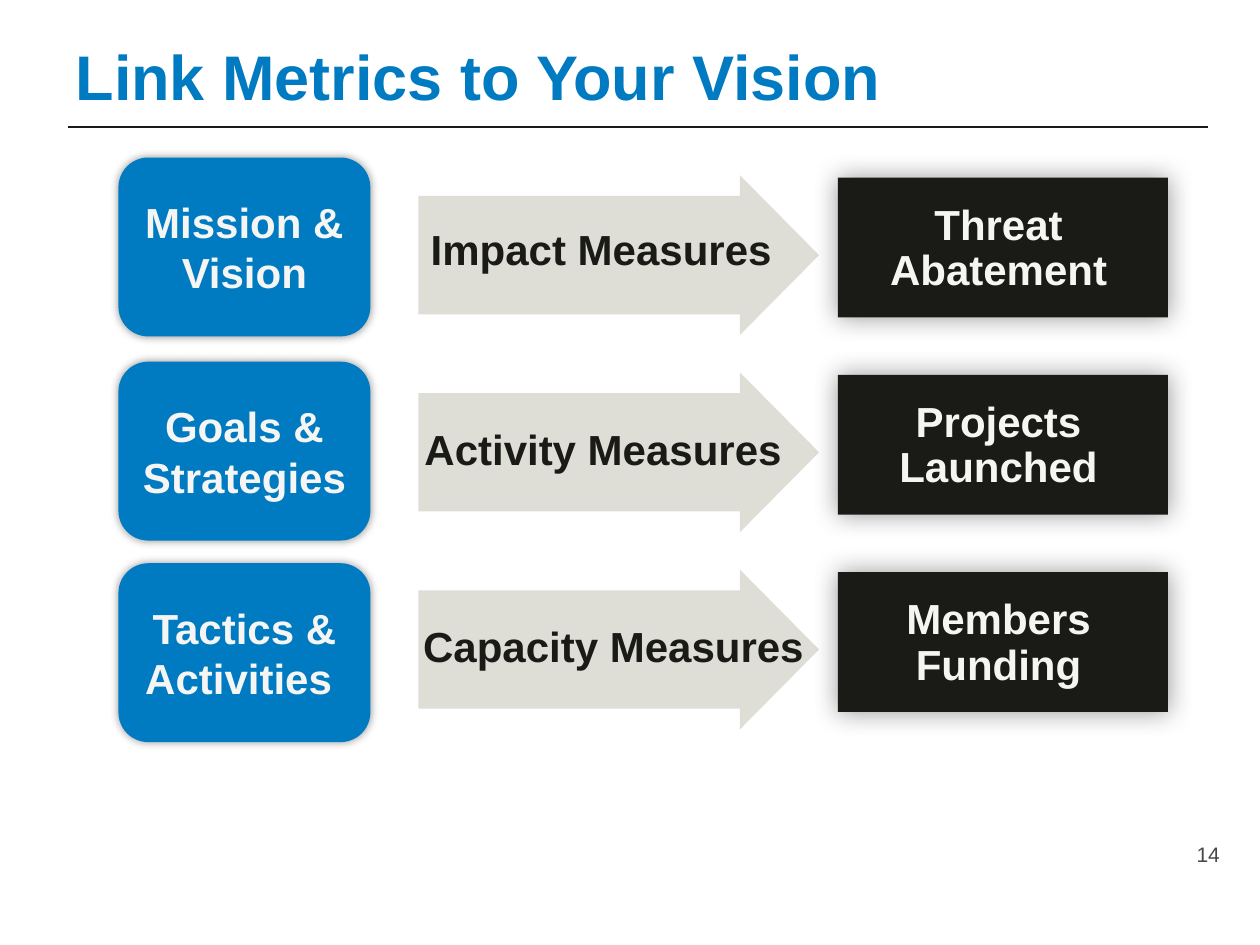
from dataclasses import dataclass

from lxml import etree
from pptx import Presentation
from pptx.dml.color import RGBColor
from pptx.enum.shapes import MSO_CONNECTOR, MSO_SHAPE
from pptx.enum.text import MSO_ANCHOR, PP_ALIGN
from pptx.oxml.ns import qn
from pptx.util import Inches, Pt

ROUNDED = MSO_SHAPE.ROUNDED_RECTANGLE
ARROW = MSO_SHAPE.RIGHT_ARROW
RECT = MSO_SHAPE.RECTANGLE
LEFT, CENTER, RIGHT = PP_ALIGN.LEFT, PP_ALIGN.CENTER, PP_ALIGN.RIGHT
TOP, MIDDLE, BOTTOM = MSO_ANCHOR.TOP, MSO_ANCHOR.MIDDLE, MSO_ANCHOR.BOTTOM

FONT = "Arial"
BLUE, INK, STONE, PALE, GREY = "007AC1", "1A1A16", "BEBEB0", "F5F5F3", "484847"
FIRST_ARROW, LAST_ARROW = 1.39, 4.52


@dataclass
class Row:
    goal: str
    goal_top: float
    measure: str
    measure_left: float
    measure_drop: float  # label top below the arrow top
    measure_width: float
    results: list[str]  # one paragraph each


ROWS = [
    Row("Mission & Vision", 1.25, "Impact Measures", 3.32, 0.38, 3.18,
        ["Threat\vAbatement"]),
    Row("Goals & Strategies", 2.87, "Activity Measures", 3.27, 0.4, 3.28,
        ["Projects", "Launched"]),
    Row("Tactics & Activities ", 4.47, "Capacity Measures", 3.26, 0.4, 3.38,
        ["Members", "Funding"]),
]


def rgb(color: str) -> RGBColor:
    return RGBColor.from_string(color)


def write(tf, lines: list[str], size: float, color: str, bold=True,
          align=LEFT, anchor=TOP, spacing=None) -> None:
    tf.word_wrap = True
    tf.vertical_anchor = anchor
    for i, line in enumerate(lines):
        p = tf.paragraphs[0] if i == 0 else tf.add_paragraph()
        p.alignment = align
        p.space_before = Pt(0)
        if spacing:
            p.line_spacing = spacing
        for j, part in enumerate(line.split("\v")):
            if j:
                p.add_line_break()
            r = p.add_run()
            r.text = part
            r.font.name, r.font.size, r.font.bold = FONT, Pt(size), bold
            r.font.color.rgb = rgb(color)


def add_shape(s, kind, x: float, y: float, w: float, h: float, color: str):
    sp = s.shapes.add_shape(kind, Inches(x), Inches(y), Inches(w), Inches(h))
    sp.shadow.inherit = False
    sp.fill.solid()
    sp.fill.fore_color.rgb = rgb(color)
    sp.line.fill.background()
    return sp


def add_text(s, x: float, y: float, w: float, h: float, lines: list[str],
             size: float, color: str, **style):
    box = s.shapes.add_textbox(Inches(x), Inches(y), Inches(w), Inches(h))
    write(box.text_frame, lines, size, color, **style)
    return box


def add_shadow(sp, blur: float, angle: int) -> None:
    effects = sp._element.spPr.find(qn("a:effectLst"))
    shadow = etree.SubElement(effects, qn("a:outerShdw"), blurRad=str(Pt(blur)),
                              dist="0", dir=str(angle * 60000), rotWithShape="0")
    color = etree.SubElement(shadow, qn("a:srgbClr"), val="000000")
    etree.SubElement(color, qn("a:alpha"), val="40000")


def add_row(s, row: Row, top: float) -> None:
    # Goal
    sp = add_shape(s, ROUNDED, 0.94, row.goal_top, 2, 1.42, BLUE)
    add_shadow(sp, 5, 0)
    write(sp.text_frame, [row.goal], 24, PALE, align=CENTER, anchor=MIDDLE)

    # Half-transparent arrow with its measure
    sp = add_shape(s, ARROW, 3.32, top, 3.18, 1.27, STONE)
    sp.adjustments[0], sp.adjustments[1] = 0.74, 0.495
    fill_color = sp._element.spPr.find(qn("a:solidFill"))[0]
    etree.SubElement(fill_color, qn("a:alpha"), val="50000")
    add_text(s, row.measure_left, top + row.measure_drop, row.measure_width, 0.46,
             [row.measure], 24, INK, spacing=0.9)

    # Results
    sp = add_shape(s, RECT, 6.65, top + 0.02, 2.62, 1.11, INK)
    add_shadow(sp, 15, 45)
    add_text(s, 6.85, top + 0.18, 2.15, 0.83, row.results, 24, PALE,
             align=CENTER, spacing=0.9)


def main() -> None:
    prs = Presentation()
    prs.slide_width, prs.slide_height = Inches(10), Inches(7.5)
    s = prs.slides.add_slide(prs.slide_layouts[5])

    # Title and rule
    title = s.shapes.title
    title.left, title.top = Inches(0.5), Inches(0.1)
    title.width, title.height = Inches(9.12), Inches(1)
    title.text_frame.margin_right = Inches(0.05)
    write(title.text_frame, ["Link Metrics to Your Vision"], 36, BLUE, anchor=MIDDLE)
    rule = s.shapes.add_connector(MSO_CONNECTOR.STRAIGHT, Inches(0.54), Inches(1.01),
                                  Inches(9.59), Inches(1.01))
    rule.line.color.rgb = rgb(INK)
    rule.line.width = Pt(1.25)
    etree.SubElement(rule._element.spPr, qn("a:effectLst"))

    # Goals, measures and results
    pitch = (LAST_ARROW - FIRST_ARROW) / (len(ROWS) - 1)
    for i, row in enumerate(ROWS):
        add_row(s, row, FIRST_ARROW + i * pitch)

    # Slide number
    number = add_text(s, 8.98, 6.58, 0.8, 0.3, ["14"], 12, GREY, bold=False,
                      align=RIGHT, anchor=BOTTOM)
    number.text_frame.margin_bottom = 0

    prs.save("out.pptx")


if __name__ == "__main__":
    main()
